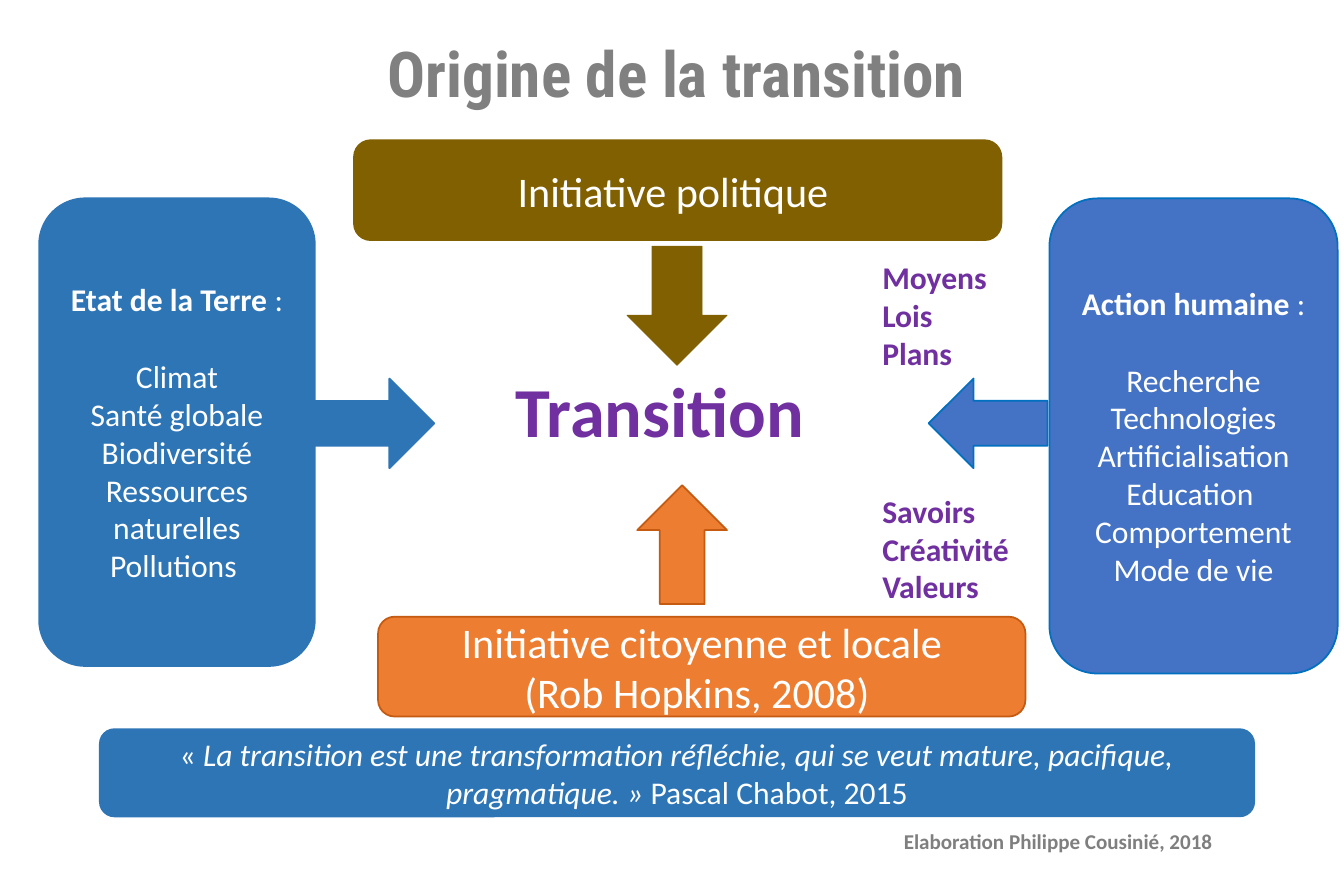
from dataclasses import dataclass

from pptx import Presentation
from pptx import util as u
from pptx.dml.color import RGBColor
from pptx.enum import shapes, text


@dataclass(frozen=True)
class Theme:
    body_font: str = "Calibri"
    title_font: str = "Roboto Condensed"
    white: str = "FFFFFF"
    title_gray: str = "808080"
    credit_gray: str = "7F7F7F"
    purple: str = "7030A0"
    olive: str = "806000"
    orange: str = "ED7D31"
    orange_edge: str = "C55A11"
    blue: str = "2E75B6"
    indigo: str = "4472C4"
    indigo_edge: str = "0070C0"
    title_size: int = 36
    key_size: int = 40
    initiative_size: int = 24
    body_size: int = 18
    credit_size: int = 12
    heading_gap: int = 22


class SlideBuilder:
    def __init__(self, slide, theme):
        self.slide = slide
        self.theme = theme

    def place(self, box):
        return [u.Inches(length) for length in box]

    def add_text(self, frame, paragraphs, size, color, align, bold=False, font=None):
        frame.word_wrap = True
        for index, runs in enumerate(paragraphs):
            paragraph = frame.paragraphs[0] if index == 0 else frame.add_paragraph()
            paragraph.alignment = align
            for words, style in [(runs, "")] if isinstance(runs, str) else runs:
                run = paragraph.add_run()
                run.text = words
                run.font.name = font or self.theme.body_font
                run.font.size = u.Pt(size)
                run.font.bold = bold or style == "bold"
                run.font.italic = style == "italic"
                run.font.color.rgb = RGBColor.from_string(color)

    def title(self, box, words):
        heading = self.slide.shapes.title
        heading.left, heading.top, heading.width, heading.height = self.place(box)
        frame = heading.text_frame
        frame.margin_left = frame.margin_right = u.Inches(0.1)
        frame.margin_top = frame.margin_bottom = u.Inches(0.1)
        frame.vertical_anchor = text.MSO_ANCHOR.MIDDLE
        self.add_text(frame, [words], self.theme.title_size, self.theme.title_gray,
                      text.PP_ALIGN.CENTER, True, self.theme.title_font)

    def shape(self, kind, box, fill, edge, weight=1):
        item = self.slide.shapes.add_shape(kind, *self.place(box))
        item.shadow.inherit = False
        item.fill.solid()
        item.fill.fore_color.rgb = RGBColor.from_string(fill)
        item.line.color.rgb = RGBColor.from_string(edge)
        item.line.width = u.Pt(weight)
        return item

    def panel(self, box, fill, edge, paragraphs, size):
        item = self.shape(shapes.MSO_SHAPE.ROUNDED_RECTANGLE, box, fill, edge)
        item.text_frame.vertical_anchor = text.MSO_ANCHOR.MIDDLE
        self.add_text(item.text_frame, paragraphs, size, self.theme.white,
                      text.PP_ALIGN.CENTER)
        return item

    def factor(self, box, fill, edge, heading, topics):
        heading_runs = [(heading + " ", "bold"), (":", "")]
        item = self.panel(box, fill, edge, [heading_runs, *topics], self.theme.body_size)
        item.text_frame.paragraphs[0].space_after = u.Pt(self.theme.heading_gap)

    def arrow(self, box, turn, fill, edge, weight=1):
        item = self.shape(shapes.MSO_SHAPE.DOWN_ARROW, box, fill, edge, weight)
        item.rotation = turn

    def label(self, box, paragraphs, size, color, fill=None):
        item = self.slide.shapes.add_textbox(*self.place(box))
        if fill:
            item.fill.solid()
            item.fill.fore_color.rgb = RGBColor.from_string(fill)
        self.add_text(item.text_frame, paragraphs, size, color, text.PP_ALIGN.LEFT, True)


def main():
    deck = Presentation()
    deck.slide_width, deck.slide_height = u.Inches(10.63), u.Inches(7.09)
    theme = Theme()
    page = SlideBuilder(deck.slides.add_slide(deck.slide_layouts[5]), theme)

    page.title((0.31, 0.23, 10.08, 0.69), "Origine de la transition")

    page.panel((2.8, 1.11, 5.12, 0.79), theme.olive, theme.olive,
               ["Initiative politique "], theme.initiative_size)
    page.panel((2.99, 4.88, 5.12, 0.79), theme.orange, theme.orange_edge,
               ["Initiative citoyenne et locale", "(Rob Hopkins, 2008) "],
               theme.initiative_size)
    page.arrow((4.96, 1.95, 0.79, 0.94), 0, theme.olive, theme.olive, 0.5)
    page.arrow((5.04, 3.84, 0.71, 0.94), 180, theme.orange, theme.orange_edge)
    page.label((3.98, 2.86, 3.23, 0.77), ["Transition"], theme.key_size, theme.purple)

    page.factor((0.31, 1.57, 2.18, 3.7), theme.blue, theme.blue, "Etat de la Terre",
                ["Climat", "Santé globale", "Biodiversité",
                 "Ressources naturelles", "Pollutions "])
    page.arrow((2.61, 2.88, 0.71, 0.94), 270, theme.blue, theme.blue)
    page.factor((8.3, 1.57, 2.28, 3.76), theme.indigo, theme.indigo_edge, "Action humaine",
                ["Recherche", "Technologies", "Artificialisation",
                 "Education ", "Comportement", "Mode de vie"])
    page.arrow((7.46, 2.88, 0.71, 0.94), 90, theme.indigo, theme.indigo_edge)

    page.label((7.05, 6.51, 3.16, 0.3), ["Elaboration Philippe Cousinié, 2018"],
               theme.credit_size, theme.credit_gray, theme.white)
    page.label((6.88, 3.84, 1.38, 1.01), ["Savoirs", "Créativité", "Valeurs"],
               theme.body_size, theme.purple)
    page.label((6.88, 1.99, 1.18, 1.01), ["Moyens", "Lois", "Plans"],
               theme.body_size, theme.purple)

    quote = [("«", ""),
             (" La transition est une transformation réfléchie, qui se veut mature, "
              "pacifique, pragmatique. »", "italic"),
             (" Pascal Chabot, 2015", "")]
    page.panel((0.79, 5.77, 9.13, 0.69), theme.blue, theme.blue, [quote], theme.body_size)

    deck.save("out.pptx")


if __name__ == "__main__":
    main()
